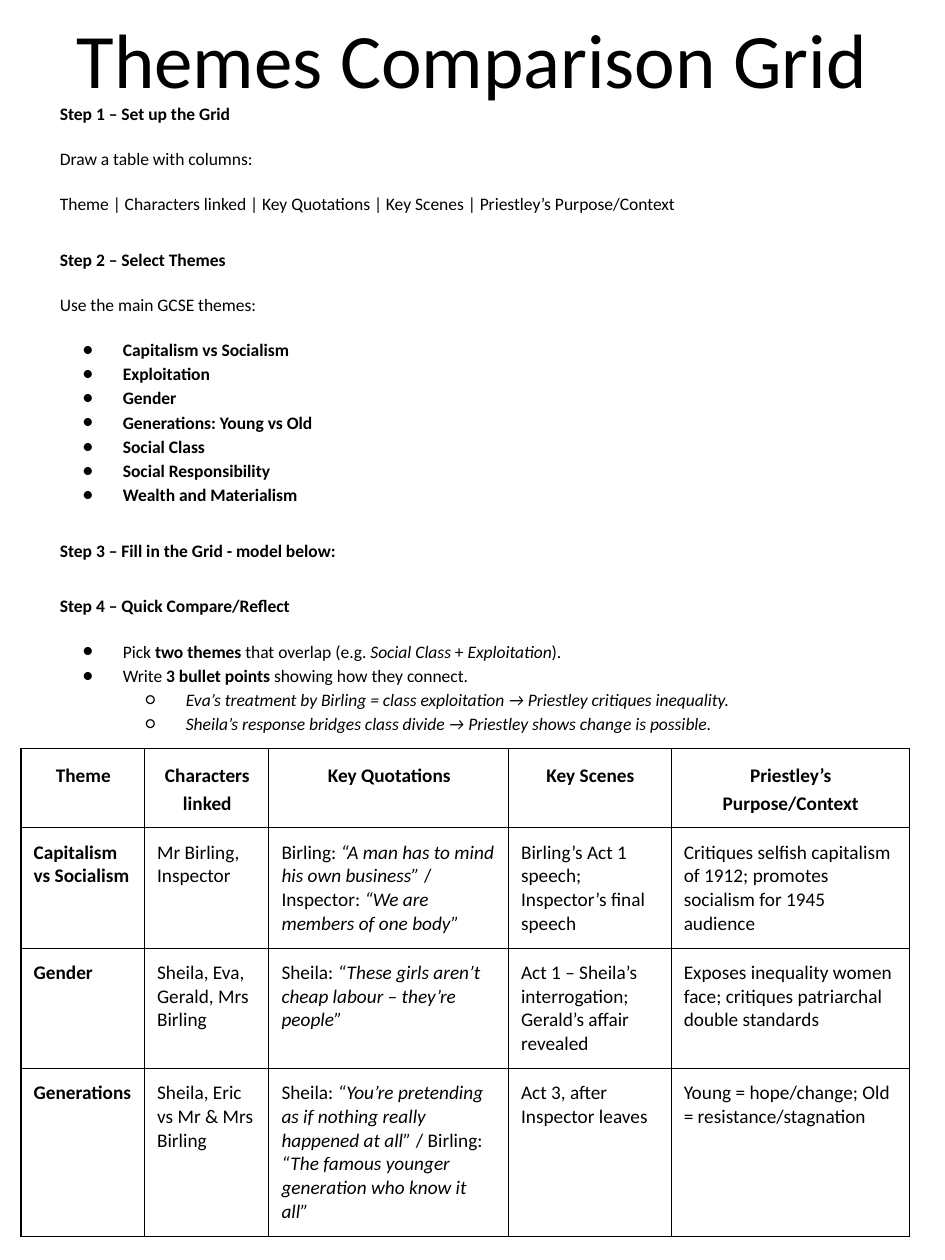
from lxml import etree
from pptx import Presentation
from pptx.dml.color import RGBColor
from pptx.enum.text import MSO_ANCHOR, MSO_AUTO_SIZE, PP_ALIGN
from pptx.oxml.ns import qn
from pptx.util import Pt

BLACK = RGBColor(0, 0, 0)
FONT = "Calibri"
LEFT, CENTER = PP_ALIGN.LEFT, PP_ALIGN.CENTER
TOP, MIDDLE = MSO_ANCHOR.TOP, MSO_ANCHOR.MIDDLE
NO_FIT = MSO_AUTO_SIZE.NONE
BULLETS = {1: "●", 2: "○"}
CELL_MARGIN = Pt(7.2)
CELL_MARGIN_RIGHT = Pt(6.5)

THEMES = [
    "Capitalism vs Socialism", "Exploitation", "Gender", "Generations: Young vs Old",
    "Social Class", "Social Responsibility", "Wealth and Materialism",
]
OVERLAP = [
    ("Pick ", ""), ("two themes", "b"), (" that overlap (e.g. ", ""), ("Social Class", "i"),
    (" + ", ""), ("Exploitation", "i"), (").", ""),
]
CONNECTION = [("Write ", ""), ("3 bullet points", "b"), (" showing how they connect.", "")]
EXAMPLES = [
    "Eva’s treatment by Birling = class exploitation → Priestley critiques inequality.",
    "Sheila’s response bridges class divide → Priestley shows change is possible.",
]

COLUMN_WIDTHS = [70.6, 71.1, 136.9, 93, 136]
ROW_HEIGHTS = [42, 65, 65, 77]
HEADINGS = ["Theme", "Characters linked", "Key Quotations", "Key Scenes",
            "Priestley’s Purpose/Context"]
GRID = [
    ["Capitalism vs Socialism", "Mr Birling, Inspector",
     [("Birling: ", ""), ("“A man has to mind his own business”", "i"),
      (" / Inspector: ", ""), ("“We are members of one body”", "i")],
     "Birling’s Act 1 speech; Inspector’s final speech",
     "Critiques selfish capitalism of 1912; promotes socialism for 1945 audience"],
    ["Gender", "Sheila, Eva, Gerald, Mrs Birling",
     [("Sheila: ", ""), ("“These girls aren’t cheap labour – they’re people”", "i")],
     "Act 1 – Sheila’s interrogation; Gerald’s affair revealed",
     "Exposes inequality women face; critiques patriarchal double standards"],
    ["Generations", "Sheila, Eric vs Mr & Mrs Birling",
     [("Sheila: ", ""), ("“You’re pretending as if nothing really happened at all”", "i"),
      (" / Birling: ", ""), ("“The famous younger generation who know it all”", "i")],
     "Act 3, after Inspector leaves",
     "Young = hope/change; Old = resistance/stagnation"],
]


def write(paragraph, text, size=10, style="", align=LEFT, spacing=1.0, before=0):
    paragraph.alignment = align
    paragraph.line_spacing = spacing
    paragraph.space_before = Pt(before)
    paragraph.space_after = Pt(0)
    pieces = [(text, style)] if isinstance(text, str) else text
    for wording, look in pieces:
        run = paragraph.add_run()
        run.text = wording
        run.font.name = FONT
        run.font.size = Pt(size)
        run.font.bold = "b" in look
        run.font.italic = "i" in look
        run.font.color.rgb = BLACK


def add_black(parent, tag):
    fill = etree.SubElement(parent, qn(tag))
    etree.SubElement(fill, qn("a:srgbClr"), val=str(BLACK))


def set_bullet(paragraph, depth):
    properties = paragraph._p.get_or_add_pPr()
    properties.set("marL", str(Pt(36 * depth)))
    properties.set("indent", str(Pt(-23) if depth else 0))
    if not depth:
        etree.SubElement(properties, qn("a:buNone"))
        return
    paragraph.level = depth - 1
    add_black(properties, "a:buClr")
    etree.SubElement(properties, qn("a:buFont"), typeface=FONT)
    etree.SubElement(properties, qn("a:buChar"), char=BULLETS[depth])


def place(placeholder, left, top, width, height, anchor):
    placeholder.left, placeholder.top = Pt(left), Pt(top)
    placeholder.width, placeholder.height = Pt(width), Pt(height)
    frame = placeholder.text_frame
    frame.auto_size = NO_FIT
    frame.word_wrap = True
    frame.vertical_anchor = anchor
    return frame


def fill_steps(frame):
    steps = [
        ("Step 1 – Set up the Grid", "b", 18, 0),
        ("Draw a table with columns:", "", 12, 0),
        ("Theme | Characters linked | Key Quotations | Key Scenes | "
         "Priestley’s Purpose/Context", "", 12, 0),
        ("Step 2 – Select Themes", "b", 18, 0),
        ("Use the main GCSE themes:", "", 12, 0),
        *[(theme, "b", 0 if number else 12, 1) for number, theme in enumerate(THEMES)],
        ("Step 3 – Fill in the Grid - model below:", "b", 18, 0),
        ("Step 4 – Quick Compare/Reflect", "b", 18, 0),
        (OVERLAP, "", 12, 1),
        (CONNECTION, "", 0, 1),
        *[(example, "i", 0, 2) for example in EXAMPLES],
    ]
    for number, (text, style, before, depth) in enumerate(steps):
        paragraph = frame.add_paragraph() if number else frame.paragraphs[0]
        write(paragraph, text, style=style, spacing=1.15, before=before)
        set_bullet(paragraph, depth)


def set_borders(cell):
    properties = cell._tc.get_or_add_tcPr()
    for position, side in enumerate(("a:lnL", "a:lnR", "a:lnT", "a:lnB")):
        border = etree.Element(qn(side), w=str(Pt(0.75)))
        add_black(border, "a:solidFill")
        properties.insert(position, border)


def add_grid(slide):
    rows = [HEADINGS, *GRID]
    table = slide.shapes.add_table(
        len(rows), len(HEADINGS), Pt(12), Pt(427.5),
        Pt(sum(COLUMN_WIDTHS)), Pt(sum(ROW_HEIGHTS))).table
    table.first_row = False
    table.horz_banding = False
    for column, width in zip(table.columns, COLUMN_WIDTHS):
        column.width = Pt(width)
    for row, height in zip(table.rows, ROW_HEIGHTS):
        row.height = Pt(height)
    for r, entries in enumerate(rows):
        for c, text in enumerate(entries):
            cell = table.cell(r, c)
            cell.fill.background()
            cell.margin_left = cell.margin_top = cell.margin_bottom = CELL_MARGIN
            cell.margin_right = CELL_MARGIN_RIGHT
            cell.vertical_anchor = TOP
            heading = r == 0
            write(cell.text_frame.paragraphs[0], text, size=11,
                  style="b" if heading or c == 0 else "",
                  align=CENTER if heading else LEFT,
                  spacing=1.15 if heading else 1.0)
            set_borders(cell)


def main():
    presentation = Presentation()
    presentation.slide_width, presentation.slide_height = Pt(540), Pt(720)
    slide = presentation.slides.add_slide(presentation.slide_layouts[1])
    title = place(slide.shapes.title, 27, -27, 486, 120, MIDDLE)
    write(title.paragraphs[0], "Themes Comparison Grid", size=44, align=CENTER)
    fill_steps(place(slide.placeholders[1], 27, 53.4, 486, 475, TOP))
    add_grid(slide)
    presentation.save("out.pptx")


if __name__ == "__main__":
    main()
